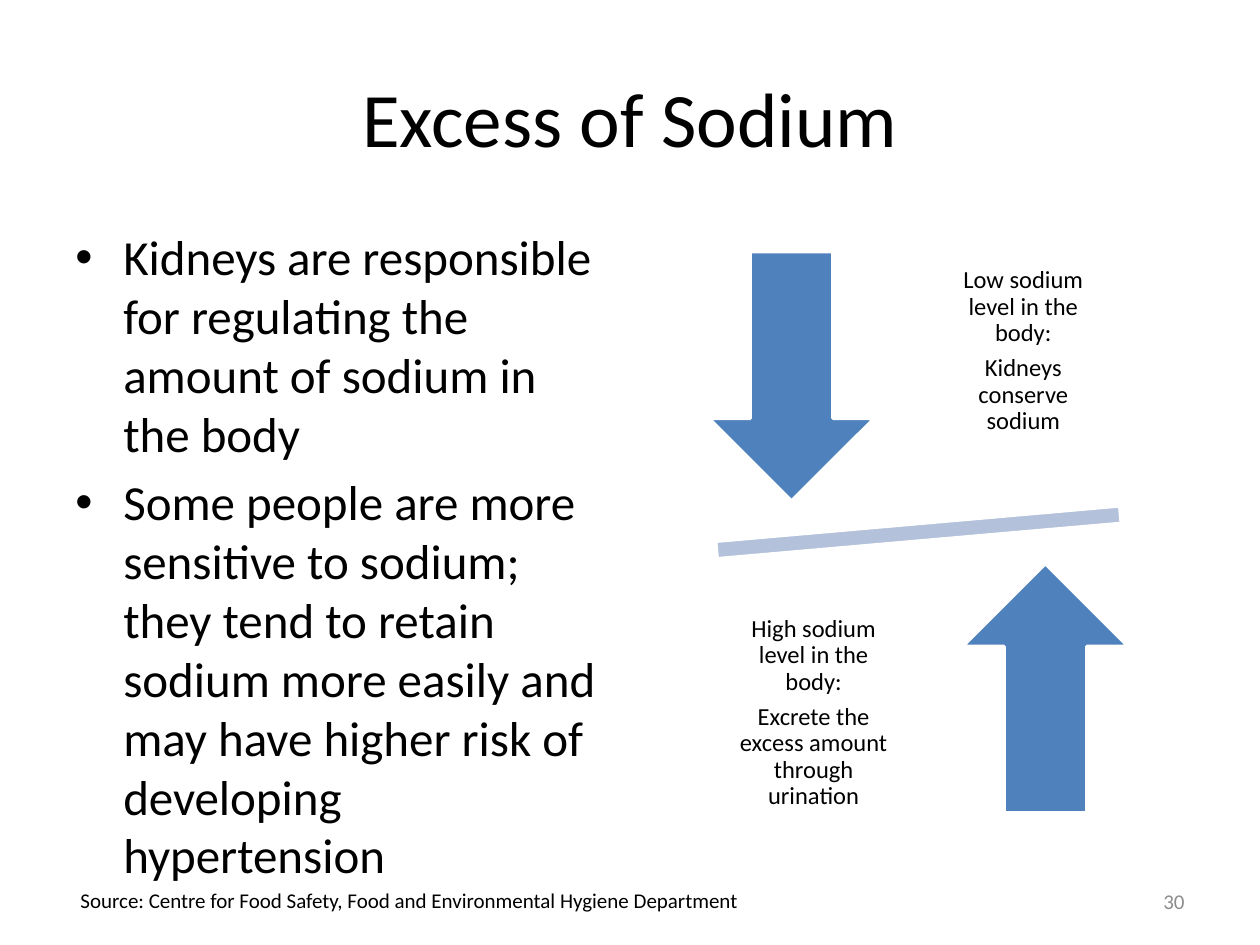
import pptx
import pptx.dml.color
import pptx.enum.shapes
import pptx.enum.text
import pptx.util

RGBColor = pptx.dml.color.RGBColor
SHAPE = pptx.enum.shapes.MSO_SHAPE
ALIGN = pptx.enum.text.PP_ALIGN
ANCHOR = pptx.enum.text.MSO_ANCHOR
Pt = pptx.util.Pt

BLACK = RGBColor(0x00, 0x00, 0x00)
WHITE = RGBColor(0xFF, 0xFF, 0xFF)
GREY = RGBColor(0x8C, 0x8C, 0x8C)
BLUE = RGBColor(0x4F, 0x81, 0xBD)
PALE_BLUE = RGBColor(0xB3, 0xC1, 0xDB)

POINTS = [
    "Kidneys are responsible for regulating the amount of sodium in the body",
    "Some people are more sensitive to sodium; they tend to retain sodium more "
    "easily and may have higher risk of developing hypertension",
]
LOW = ["Low sodium level in the body:", "Kidneys conserve sodium"]
HIGH = ["High sodium level in the body:", "Excrete the excess amount through urination"]
SOURCE = "Source: Centre for Food Safety, Food and Environmental Hygiene Department"


def inches(*lengths):
    """Convert lengths in inches to slide units."""
    return [pptx.util.Inches(length) for length in lengths]


def within(box, left, top, width, height):
    """Return the part of a box given by shares of its width and height."""
    x, y, w, h = box
    return [int(v) for v in (x + left * w, y + top * h, width * w, height * h)]


def mirrored(left, top, width, height):
    """Turn a share rectangle by half a turn about the centre of its box."""
    return 1 - left - width, 1 - top - height, width, height


def write(frame, lines, size, color=BLACK, anchor=ANCHOR.TOP, inset=None, **layout):
    """Fill a text frame with equally formatted paragraphs."""
    frame.word_wrap = True
    frame.vertical_anchor = anchor
    if inset is not None:
        for side in ("left", "top", "right", "bottom"):
            setattr(frame, f"margin_{side}", inset)
    frame.text = "\n".join(lines)
    for paragraph in frame.paragraphs:
        for name, value in layout.items():
            setattr(paragraph, name, value)
        font = paragraph.runs[0].font
        font.name, font.size = "Calibri", Pt(size)
        font.color.rgb = color


def add_title(slide, box):
    """Place the slide title."""
    title = slide.shapes.title
    for name, value in zip(("left", "top", "width", "height"), box):
        setattr(title, name, value)
    write(title.text_frame, ["Excess of Sodium"], 44,
          anchor=ANCHOR.MIDDLE, alignment=ALIGN.CENTER)


def add_points(slide, box):
    """Place the bulleted list about the kidneys."""
    frame = slide.shapes.add_textbox(*box).text_frame
    write(frame, POINTS, 28, space_before=Pt(5.6))
    indent = pptx.util.Inches(0.38)
    for paragraph in frame.paragraphs:
        properties = paragraph._p.get_or_add_pPr()
        properties.set("marL", str(indent))
        properties.set("indent", str(-indent))
        for tag, key, value in (("a:buFont", "typeface", "Arial"), ("a:buChar", "char", "•")):
            bullet = pptx.oxml.xmlchemy.OxmlElement(tag)
            bullet.set(key, value)
            properties.append(bullet)


def add_balance(slide, box):
    """Place the tilted beam with its opposing arrows and labels."""
    group = slide.shapes.add_group_shape().shapes
    arrow_area = (0.12, 0.05, 0.3, 0.4)
    label_area = (0.53, 0, 0.32, 0.42)
    for kind, area, fill, turn in (
        (SHAPE.MATH_MINUS, (0, 0.44, 1, 0.12), PALE_BLUE, 355),
        (SHAPE.DOWN_ARROW, arrow_area, BLUE, 0),
        (SHAPE.UP_ARROW, mirrored(*arrow_area), BLUE, 0),
    ):
        shape = group.add_shape(kind, *within(box, *area))
        shape.rotation = turn
        shape.shadow.inherit = False
        shape.fill.solid()
        shape.fill.fore_color.rgb = fill
        shape.line.color.rgb = WHITE
        shape.line.width = Pt(2)
    for lines, area in ((LOW, label_area), (HIGH, mirrored(*label_area))):
        label = group.add_textbox(*within(box, *area))
        write(label.text_frame, lines, 14, anchor=ANCHOR.MIDDLE, inset=Pt(7.9),
              alignment=ALIGN.CENTER, line_spacing=0.9, space_after=Pt(4.9))


def add_footer(slide, box):
    """Place the source line and the page number."""
    source = slide.shapes.add_textbox(*within(box, 0, 0.12, 0.94, 0.75))
    write(source.text_frame, [SOURCE], 12)
    number = slide.shapes.add_textbox(*within(box, 0.74, 0, 0.26, 1))
    write(number.text_frame, ["30"], 12, GREY, ANCHOR.MIDDLE, alignment=ALIGN.RIGHT)


def main():
    """Build the slide and save it."""
    deck = pptx.Presentation()
    deck.slide_width, deck.slide_height = inches(10, 7.5)
    slide = deck.slides.add_slide(deck.slide_layouts[5])
    add_title(slide, inches(0.5, 0.3, 9, 1.25))
    add_points(slide, inches(0.5, 1.75, 4.42, 4.95))
    add_balance(slide, inches(5.1, 1.75, 4.38, 4.95))
    add_footer(slide, inches(0.54, 6.95, 8.96, 0.4))
    deck.save("out.pptx")


if __name__ == "__main__":
    main()
